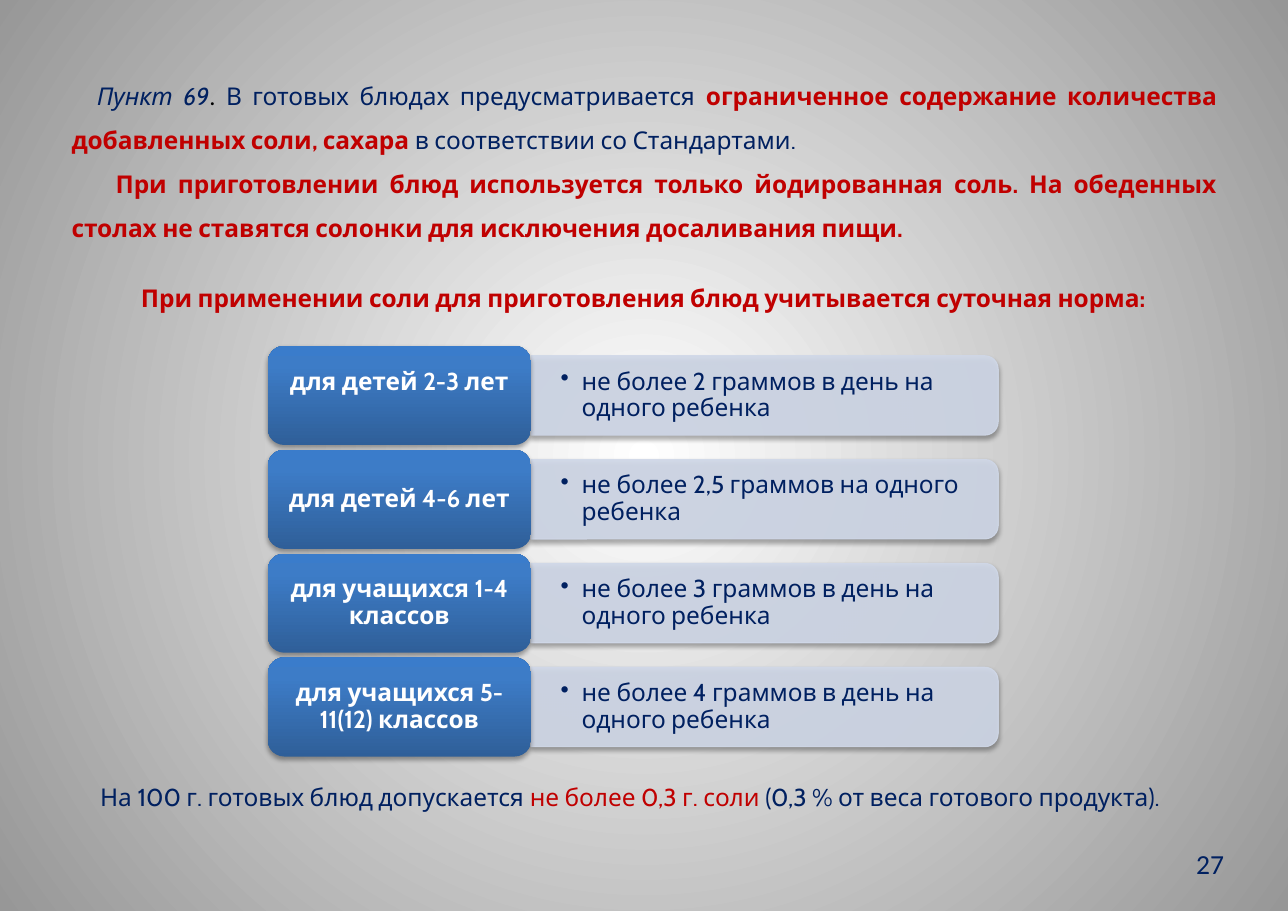
from dataclasses import dataclass

from pptx import Presentation
from pptx import util as u
from pptx.dml import color as colors
from pptx.enum import shapes, text
from pptx.oxml import ns, parse_xml

NAVY, RED, WHITE, BLACK = "002060", "C00000", "FFFFFF", "000000"
BAR_COLOR = "D0D8E8"
FONT = "Cabin"
WIDTH, HEIGHT = u.Inches(11.69), u.Inches(8.27)


@dataclass(frozen=True)
class Area:
    left: float
    top: float
    width: float
    height: float

    def place(self) -> tuple[int, int, int, int]:
        return (int(WIDTH * self.left / 100), int(HEIGHT * self.top / 100),
                int(WIDTH * self.width / 100), int(HEIGHT * self.height / 100))


@dataclass(frozen=True)
class Span:
    words: str
    color: str | None = None
    bold: bool | None = None
    italic: bool | None = None
    font: str | None = None


@dataclass(frozen=True)
class Style:
    size: int = 16
    color: str = NAVY
    bold: bool = False
    font: str = FONT
    align: text.PP_ALIGN = text.PP_ALIGN.LEFT
    spacing: float = 1.0
    left: float = 0
    indent: float = 0
    bullet: str = ""


@dataclass(frozen=True)
class Norm:
    group: str
    limit: str
    bottom_margin: float = 0.03


NORMS = [
    Norm("для детей 2-3 лет", "не более 2 граммов в день на одного ребенка", 0.27),
    Norm("для детей 4-6 лет", "не более 2,5 граммов на одного ребенка"),
    Norm("для учащихся 1-4 классов", "не более 3 граммов в день на одного ребенка"),
    Norm("для учащихся 5-11(12) классов", "не более 4 граммов в день на одного ребенка"),
]
INTRO = [
    Span("Пункт 69", italic=True),
    Span(".", BLACK, font="Calibri"),
    Span(" В готовых блюдах предусматривается "),
    Span("ограниченное содержание количества добавленных соли, сахара ", RED, True),
    Span("в соответствии со Стандартами."),
]
IODINE = [Span("При приготовлении блюд используется только йодированная соль. "
               "На обеденных столах не ставятся солонки для исключения досаливания пищи.")]
HEADING = [Span("При применении соли для приготовления блюд учитывается суточная норма:")]
FOOTNOTE = [
    Span("На 100 г. готовых блюд допускается "),
    Span("не более 0,3 г. соли ", RED),
    Span("(0,3 % от веса готового продукта)."),
]
ROWS_TOP, ROW_PITCH = 37.97, 11.4
LABEL_LEFT, LABEL_WIDTH, LABEL_HEIGHT = 20.79, 20.44, 10.88
BAR_WIDTH, BAR_HEIGHT = 36.27, 8.71


def rgb(code: str) -> colors.RGBColor:
    return colors.RGBColor.from_string(code)


def element(markup: str):
    tag, rest = markup[1:].split(None, 1) if " " in markup.split(">")[0] else (
        markup[1:].split(">", 1)[0], ">" + markup.split(">", 1)[1])
    return parse_xml(f"<{tag} {ns.nsdecls('a')} {rest}")


def write(para, spans: list[Span], style: Style) -> None:
    props = para._p.get_or_add_pPr()
    props.set("marL", str(u.Inches(style.left)))
    props.set("indent", str(u.Inches(style.indent)))
    para.alignment = style.align
    para.line_spacing = style.spacing
    para.space_before = para.space_after = u.Pt(0)
    bullet = f'<a:buChar char="{style.bullet}"/>' if style.bullet else "<a:buNone />"
    props.append(element(bullet))
    para.font.name = style.font
    para.font.size = u.Pt(style.size)
    para.font.bold = style.bold
    para.font.color.rgb = rgb(style.color)
    for span in spans:
        run = para.add_run()
        run.text = span.words
        run.font.bold, run.font.italic = span.bold, span.italic
        if span.font:
            run.font.name = span.font
        if span.color:
            run.font.color.rgb = rgb(span.color)


def set_frame(box, margins: tuple[float, float, float, float], anchor=text.MSO_ANCHOR.TOP):
    frame = box.text_frame
    frame.word_wrap = True
    frame.auto_size = text.MSO_AUTO_SIZE.NONE
    frame.vertical_anchor = anchor
    (frame.margin_left, frame.margin_top,
     frame.margin_right, frame.margin_bottom) = map(u.Inches, margins)
    return frame


def move(box, area: Area) -> None:
    box.left, box.top, box.width, box.height = area.place()


def set_gradient(owner, stops: list[tuple[int, str]], direction: str) -> None:
    gradient = next(owner.iter(ns.qn("a:gradFill")))
    gradient[:] = []
    marks = "".join(f'<a:gs pos="{share * 1000}"><a:srgbClr val="{code}"/></a:gs>'
                    for share, code in stops)
    gradient.append(element(f"<a:gsLst>{marks}</a:gsLst>"))
    gradient.append(element(direction))


def add_shadow(shape) -> None:
    shape.shadow.inherit = False
    shape.element.spPr.find(ns.qn("a:effectLst")).append(element(
        '<a:outerShdw blurRad="40000" dist="23000" dir="5400000" rotWithShape="0">'
        '<a:srgbClr val="000000"><a:alpha val="35000"/></a:srgbClr></a:outerShdw>'))


def add_text(page, area: Area, spans: list[Span], style: Style,
             margins=(0.1, 0.05, 0.1, 0.05), anchor=text.MSO_ANCHOR.TOP) -> None:
    box = page.shapes.add_textbox(*area.place())
    write(set_frame(box, margins, anchor).paragraphs[0], spans, style)


def add_bar(page, area: Area) -> None:
    left, top, width, height = area.place()
    shift = (width - height) // 2
    bar = page.shapes.add_shape(shapes.MSO_SHAPE.ROUND_2_SAME_RECTANGLE,
                                left + shift, top - shift, height, width)
    bar.rotation = 90
    bar.fill.solid()
    bar.fill.fore_color.rgb = rgb(BAR_COLOR)
    bar.line.color.rgb = rgb(BAR_COLOR)
    bar.line.width = u.Pt(0.75)
    for shade in bar.element.spPr.iter(ns.qn("a:srgbClr")):
        shade.append(element('<a:alpha val="90000"/>'))
    add_shadow(bar)


def add_norm(page, row: int, norm: Norm) -> None:
    top = ROWS_TOP + row * ROW_PITCH
    bar_area = Area(LABEL_LEFT + LABEL_WIDTH, top + (LABEL_HEIGHT - BAR_HEIGHT) / 2,
                    BAR_WIDTH, BAR_HEIGHT)
    add_bar(page, bar_area)
    add_text(page, bar_area, [Span(norm.limit)],
             Style(spacing=0.9, left=0.19, indent=-0.19, bullet="•"),
             (0.27, 0.14, 0.27, 0.14), text.MSO_ANCHOR.MIDDLE)
    label = page.shapes.add_shape(
        shapes.MSO_SHAPE.ROUNDED_RECTANGLE,
        *Area(LABEL_LEFT, top, LABEL_WIDTH, LABEL_HEIGHT).place())
    label.fill.gradient()
    set_gradient(label.element, [(0, "2F5F99"), (80, "3D7CC7"), (100, "3A7CCB")],
                 '<a:lin ang="16200000" scaled="0"/>')
    label.line.fill.background()
    add_shadow(label)
    frame = set_frame(label, (0.07, 0.03, 0.07, norm.bottom_margin), text.MSO_ANCHOR.MIDDLE)
    write(frame.paragraphs[0], [Span(norm.group)],
          Style(color=WHITE, bold=True, align=text.PP_ALIGN.CENTER, spacing=0.9))


def main() -> None:
    deck = Presentation()
    deck.slide_width, deck.slide_height = WIDTH, HEIGHT
    page = deck.slides.add_slide(deck.slide_layouts[1])
    page.background.fill.gradient()
    set_gradient(page.element, [(0, "FFFFFF"), (100, "979797")],
                 '<a:path path="circle"><a:fillToRect l="50000" t="50000" '
                 'r="50000" b="50000"/></a:path>')

    title, body = page.placeholders
    move(title, Area(10.09, 28.9, 85.2, 6.05))
    write(set_frame(title, (0.1, 0.05, 0.1, 0.05)).paragraphs[0], HEADING,
          Style(color=RED, bold=True, spacing=1.5))
    move(body, Area(4.7, 6.65, 90.68, 21.4))
    frame = set_frame(body, (0.1, 0.05, 0.1, 0.05))
    justified = text.PP_ALIGN.JUSTIFY
    write(frame.paragraphs[0], INTRO, Style(align=justified, spacing=1.5, indent=0.23))
    write(frame.add_paragraph(), IODINE,
          Style(color=RED, bold=True, align=justified, spacing=1.5, indent=0.4))

    for row, norm in enumerate(NORMS):
        add_norm(page, row, norm)
    add_text(page, Area(6.93, 85.25, 92, 4.47), FOOTNOTE, Style())
    add_text(page, Area(72.03, 92.99, 23.01, 3.63), [Span("27")],
             Style(size=18, font="Calibri", align=text.PP_ALIGN.RIGHT), (0, 0, 0, 0))
    deck.save("out.pptx")


if __name__ == "__main__":
    main()
